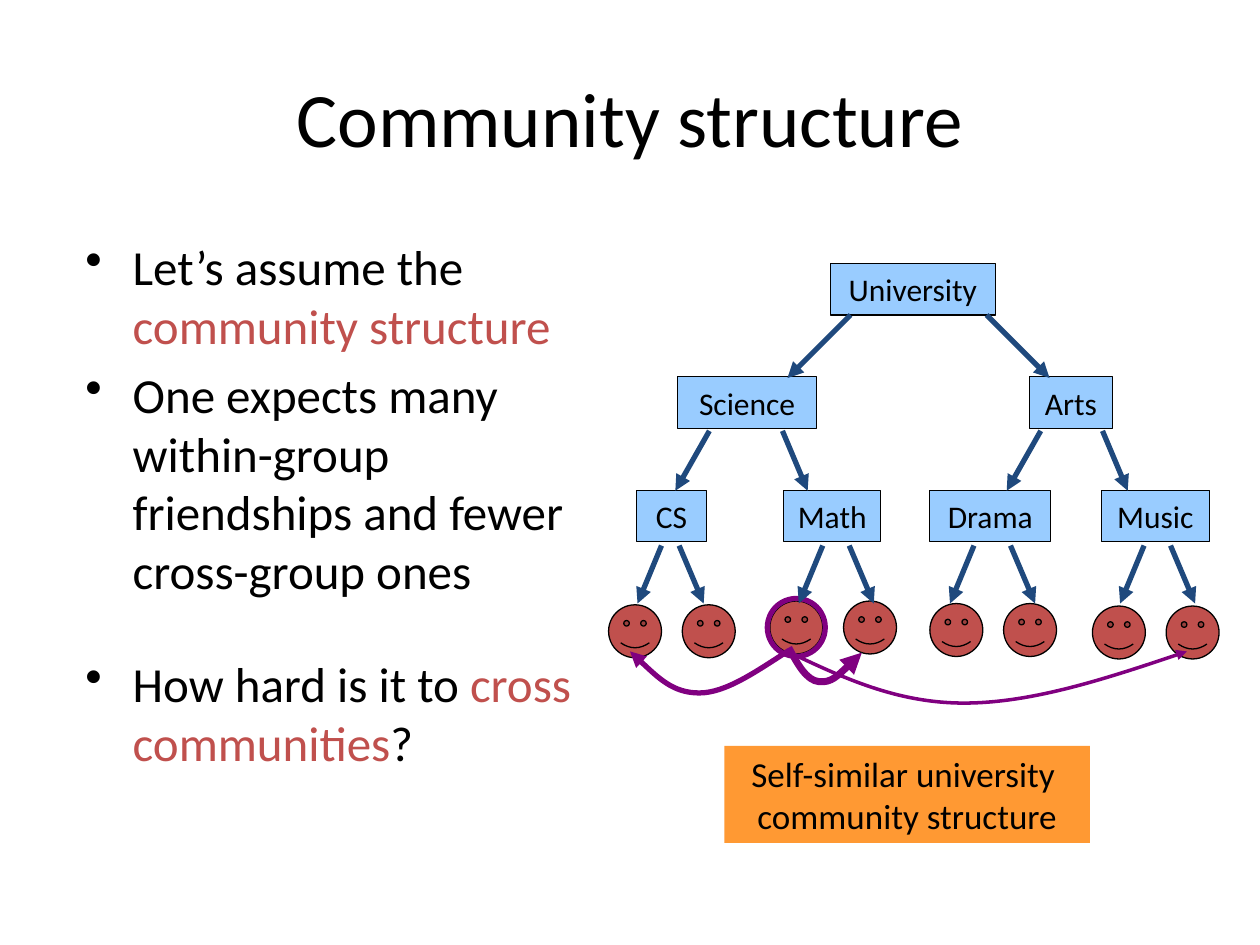
from dataclasses import dataclass

from lxml import etree
from pptx import Presentation
from pptx.dml.color import RGBColor
from pptx.enum.shapes import MSO_CONNECTOR, MSO_SHAPE
from pptx.enum.text import MSO_ANCHOR, PP_ALIGN
from pptx.oxml.ns import qn
from pptx.util import Inches, Pt

STRAIGHT = MSO_CONNECTOR.STRAIGHT
RECTANGLE, OVAL, SMILEY = MSO_SHAPE.RECTANGLE, MSO_SHAPE.OVAL, MSO_SHAPE.SMILEY_FACE
MIDDLE = MSO_ANCHOR.MIDDLE
CENTER = PP_ALIGN.CENTER

WIDTH, HEIGHT = Inches(10), Inches(7.5)
COLUMNS, ROWS = 100, 75
BOX_HEIGHT = 4.1
FACE_SIZE, FACE_STEP = 4.2, 5.85


@dataclass(frozen=True)
class Theme:
    font: str = "Calibri"
    title: int = 44
    body: int = 28
    caption: int = 20
    label: int = 18
    ink: str = "000000"
    accent: str = "C0504D"
    box: str = "99CCFF"
    banner: str = "FF9933"
    branch: str = "1F497D"
    friendship: str = "800080"


@dataclass(frozen=True)
class Level:
    top: float
    arrow_top: float
    arrow_bottom: float
    leans: tuple


@dataclass(frozen=True)
class Unit:
    label: str
    level: Level
    left: float
    width: float
    arrow_starts: tuple
    faces: tuple = ()


THEME = Theme()

ROOT = Level(20.9, 25, 30, (-5, 5))
FACULTY = Level(29.9, 34.2, 38.95, (-2.7, 2))
DEPARTMENT = Level(38.9, 43.3, 47.9, (-1.9, 1.95))

UNITS = [
    Unit("University", ROOT, 65.9, 13.1, (67.5, 78.3)),
    Unit("Science", FACULTY, 53.8, 11, (56.3, 62.1)),
    Unit("Arts", FACULTY, 81.7, 6.6, (82.6, 87.5)),
    Unit("CS", DEPARTMENT, 50.5, 5.6, (52.5, 53.9), (48.3, 48)),
    Unit("Math", DEPARTMENT, 62.2, 7.7, (65.3, 67.4), (61.1, 47.7)),
    Unit("Drama", DEPARTMENT, 73.8, 9.6, (77.3, 80.2), (73.8, 47.9)),
    Unit("Music", DEPARTMENT, 87.4, 8.6, (90.8, 92.9), (86.7, 48.1)),
]

FRIENDSHIPS = [
    (2, [(62.5, 51.7), (66.9, 53.8), (71.2, 55.8), (76.5, 55.8),
         (81.8, 55.8), (88, 53.8), (94.2, 51.7)]),
    (4, [(62.6, 51.4), (63.3, 52.7), (64, 54), (65, 54.1),
         (66, 54.2), (67.2, 53), (68.4, 51.8)]),
    (3, [(62.5, 51.7), (60, 53.3), (57.6, 55), (55.5, 55),
         (53.4, 55), (51.7, 53.3), (50, 51.7)]),
]

BULLETS = [
    (5.6, [("Let’s assume the ", THEME.ink), ("community structure", THEME.accent)]),
    (5.6, [("One expects many within-group friendships and fewer cross-group ones",
            THEME.ink)]),
    (31, [("How hard is it to ", THEME.ink), ("cross communities", THEME.accent),
          ("?", THEME.ink)]),
]


def across(columns):
    return round(WIDTH * columns / COLUMNS)


def down(rows):
    return round(HEIGHT * rows / ROWS)


def area(left, top, width, height):
    return across(left), down(top), across(width), down(height)


def color(value):
    return RGBColor.from_string(value)


def style_font(font, size, value=THEME.ink):
    font.name = THEME.font
    font.size = Pt(size)
    font.color.rgb = color(value)


def style_line(item, value, points, arrow=False):
    item.line.color.rgb = color(value)
    item.line.width = Pt(points)
    if arrow:
        line = item.element.spPr.find(qn("a:ln"))
        etree.SubElement(line, qn("a:tailEnd"), type="triangle")


def add_title(page, text):
    title = page.shapes.title
    title.left, title.top, title.width, title.height = area(5, 3, 90, 12.5)
    title.text_frame.text = text
    title.text_frame.vertical_anchor = MIDDLE
    para = title.text_frame.paragraphs[0]
    para.alignment = CENTER
    style_font(para.font, THEME.title)


def add_bullets(page, bullets):
    frame = page.shapes.add_textbox(*area(5.8, 18.3, 41.7, 52.5)).text_frame
    frame.word_wrap = True
    for index, (gap, spans) in enumerate(bullets):
        para = frame.add_paragraph() if index else frame.paragraphs[0]
        para.space_before = Pt(gap)
        style_font(para.font, THEME.body)
        properties = para._p.get_or_add_pPr()
        properties.set("marL", str(across(3.75)))
        properties.set("indent", str(-across(3.75)))
        bullet = etree.Element(qn("a:buChar"), char="•")
        properties.find(qn("a:defRPr")).addprevious(bullet)
        for text, value in spans:
            span = para.add_run()
            span.text = text
            style_font(span.font, THEME.body, value)


def add_figure(page, kind, place, fill=None, line=None, points=0.75):
    figure = page.shapes.add_shape(kind, *area(*place))
    figure.shadow.inherit = False
    if fill:
        figure.fill.solid()
        figure.fill.fore_color.rgb = color(fill)
    else:
        figure.fill.background()
    if line:
        style_line(figure, line, points)
    else:
        figure.line.fill.background()
    return figure


def add_box(page, place, lines, size, fill, line=None):
    frame = add_figure(page, RECTANGLE, place, fill, line).text_frame
    frame.word_wrap = False
    frame.vertical_anchor = MIDDLE
    for index, text in enumerate(lines):
        para = frame.add_paragraph() if index else frame.paragraphs[0]
        para.text = text
        para.alignment = CENTER
        style_font(para.font, size)


def add_faces(page, left, top):
    for step in range(2):
        place = (left + step * FACE_STEP, top, FACE_SIZE, FACE_SIZE)
        add_figure(page, SMILEY, place, THEME.accent, THEME.ink)


def add_branches(page, unit):
    level = unit.level
    for start, lean in zip(unit.arrow_starts, level.leans):
        arrow = page.shapes.add_connector(
            STRAIGHT, across(start), down(level.arrow_top),
            across(start + lean), down(level.arrow_bottom))
        style_line(arrow, THEME.branch, 3, arrow=True)
        etree.SubElement(arrow.element.spPr, qn("a:effectLst"))


def add_friendship(page, points, nodes):
    start, *rest = [(across(x), down(y)) for x, y in nodes]
    builder = page.shapes.build_freeform(*start)
    builder.add_line_segments(rest, close=False)
    curve = builder.convert_to_shape()
    curve.shadow.inherit = False
    curve.fill.background()
    style_line(curve, THEME.friendship, points, arrow=True)
    path = next(curve.element.iter(qn("a:path")))
    segments = path.findall(qn("a:lnTo"))
    for first in range(0, len(segments), 3):
        bend = etree.SubElement(path, qn("a:cubicBezTo"))
        for segment in segments[first:first + 3]:
            bend.append(segment[0])
            path.remove(segment)


def main():
    deck = Presentation()
    deck.slide_width, deck.slide_height = WIDTH, HEIGHT
    page = deck.slides.add_slide(deck.slide_layouts[5])
    add_title(page, "Community structure")
    add_bullets(page, BULLETS)
    for unit in UNITS:
        if unit.faces:
            add_faces(page, *unit.faces)
        place = (unit.left, unit.level.top, unit.width, BOX_HEIGHT)
        add_box(page, place, [unit.label], THEME.label, THEME.box, THEME.ink)
    add_box(page, (57.5, 59.2, 29, 7.7),
            ["Self-similar university ", "community structure"],
            THEME.caption, THEME.banner)
    add_figure(page, OVAL, (60.9, 47.5, 4.6, 4.6), line=THEME.friendship, points=3)
    for points, nodes in FRIENDSHIPS:
        add_friendship(page, points, nodes)
    for unit in UNITS:
        add_branches(page, unit)
    deck.save("out.pptx")


if __name__ == "__main__":
    main()
